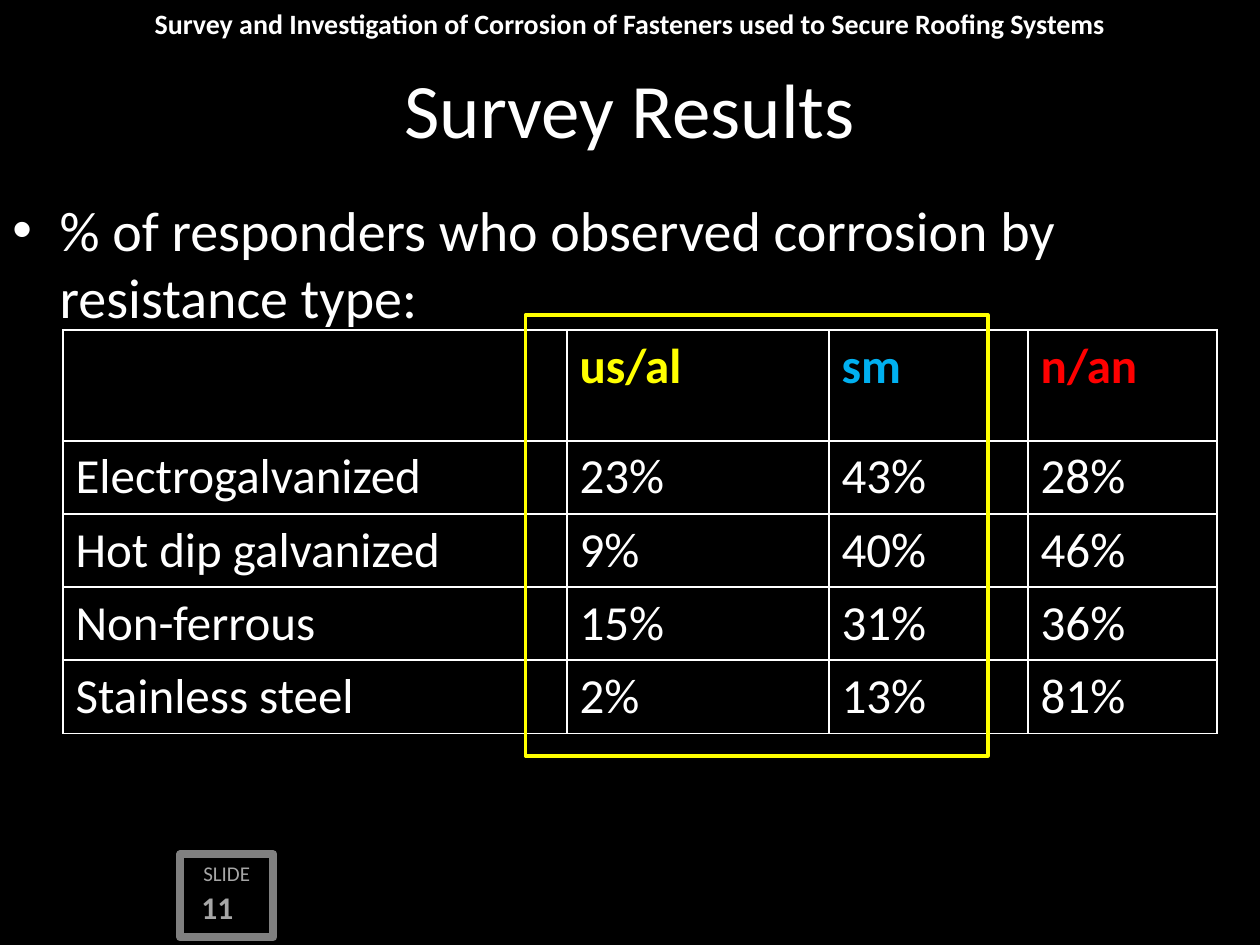
from pptx import Presentation
from pptx import util as u
from pptx.dml.color import RGBColor
from pptx.enum import shapes, text
from pptx.oxml import parse_xml
from pptx.oxml.ns import nsdecls

INK = {
    "black": "000000", "white": "FFFFFF", "yellow": "FFFF00",
    "blue": "00B0F0", "red": "FF0000", "gray": "808080", "pale": "A6A6A6",
}
HEADS = [("", "white"), ("us/al", "yellow"), ("sm", "blue"), ("n/an", "red")]
ROWS = [
    ("Electrogalvanized", "23%", "43%", "28%"),
    ("Hot dip galvanized", "9%", "40%", "46%"),
    ("Non-ferrous", "15%", "31%", "36%"),
    ("Stainless steel", "2%", "13%", "81%"),
]


def tint(name):
    """Return the named colour."""
    return RGBColor.from_string(INK[name])


def write(frame, words, size, color="white", bold=False, align="LEFT", anchor="TOP", bullet=False):
    """Put formatted words into a text frame."""
    frame.word_wrap = True
    frame.vertical_anchor = getattr(text.MSO_ANCHOR, anchor)
    para = frame.paragraphs[0]
    para.alignment = getattr(text.PP_ALIGN, align)
    if bullet:
        props = para._p.get_or_add_pPr()
        props.set("marL", str(u.Inches(0.375)))
        props.set("indent", str(u.Inches(-0.375)))
        props.append(parse_xml(f'<a:buFont {nsdecls("a")} typeface="Arial"/>'))
        props.append(parse_xml(f'<a:buChar {nsdecls("a")} char="•"/>'))
    run = para.add_run()
    run.text = words
    run.font.name = "Calibri"
    run.font.size = u.Pt(size)
    run.font.bold = bold
    run.font.color.rgb = tint(color)


def label(slide, box, words, size, **style):
    """Add a text box within the given box."""
    area = slide.shapes.add_textbox(*map(u.Inches, box))
    write(area.text_frame, words, size, **style)


def frame(slide, box, color, width, fill=None):
    """Add an outlined rectangle and return it."""
    rect = slide.shapes.add_shape(shapes.MSO_SHAPE.RECTANGLE, *map(u.Inches, box))
    rect.shadow.inherit = False
    if fill:
        rect.fill.solid()
        rect.fill.fore_color.rgb = tint(fill)
    else:
        rect.fill.background()
    rect.line.color.rgb = tint(color)
    rect.line.width = u.Pt(width)
    return rect


def badge(slide, box, number):
    """Draw the slide number badge."""
    left, top, width, height = box
    rect = frame(slide, box, "gray", 4.5, "black")
    write(rect.text_frame, "SLIDE", 12, color="pale", align="CENTER")
    label(slide, (left - 0.05, top + 0.22, width - 0.05, height - 0.23),
          number, 18, color="pale", bold=True, align="CENTER")


def heading(slide, box):
    """Place the running header and title."""
    left, top, width, height = box
    label(slide, (left, top, width, 0.3),
          "Survey and Investigation of Corrosion of Fasteners used to Secure Roofing Systems",
          16, bold=True, align="CENTER")
    label(slide, (left, top + 0.33, width, height - 0.33), "Survey Results", 44,
          align="CENTER", anchor="MIDDLE")


def results(slide, box):
    """Build the table of survey results."""
    shape = slide.shapes.add_table(len(ROWS) + 1, len(HEADS), *map(u.Inches, box))
    grid = shape.table
    grid.first_row = grid.horz_banding = False
    for col, width in zip(grid.columns, (4, 2.08, 1.58, 1.5)):
        col.width = u.Inches(width)
    pitch = 0.58
    for row in grid.rows:
        row.height = u.Inches(pitch)
    grid.rows[0].height = u.Inches(box[3] - pitch * len(ROWS))
    lines = [HEADS] + [[(words, "white") for words in row] for row in ROWS]
    for r, line in enumerate(lines):
        for c, (words, color) in enumerate(line):
            cell = grid.cell(r, c)
            cell.fill.solid()
            cell.fill.fore_color.rgb = tint("black")
            if words:
                write(cell.text_frame, words, 28, color=color, bold=r == 0)


def main():
    """Build and save the slide."""
    deck = Presentation()
    deck.slide_width, deck.slide_height = u.Inches(10), u.Inches(7.5)
    slide = deck.slides.add_slide(deck.slide_layouts[6])
    slide.background.fill.solid()
    slide.background.fill.fore_color.rgb = tint("black")
    badge(slide, (1.43, 6.78, 0.74, 0.66), "11")
    heading(slide, (0, 0, 10, 1.38))
    label(slide, (0, 1.5, 10, 5.08),
          "% of responders who observed corrosion by resistance type:", 32, bullet=True)
    results(slide, (0.5, 2.62, 9.16, 3.2))
    frame(slide, (4.17, 2.5, 3.67, 3.5), "yellow", 2)
    deck.save("out.pptx")


if __name__ == "__main__":
    main()
